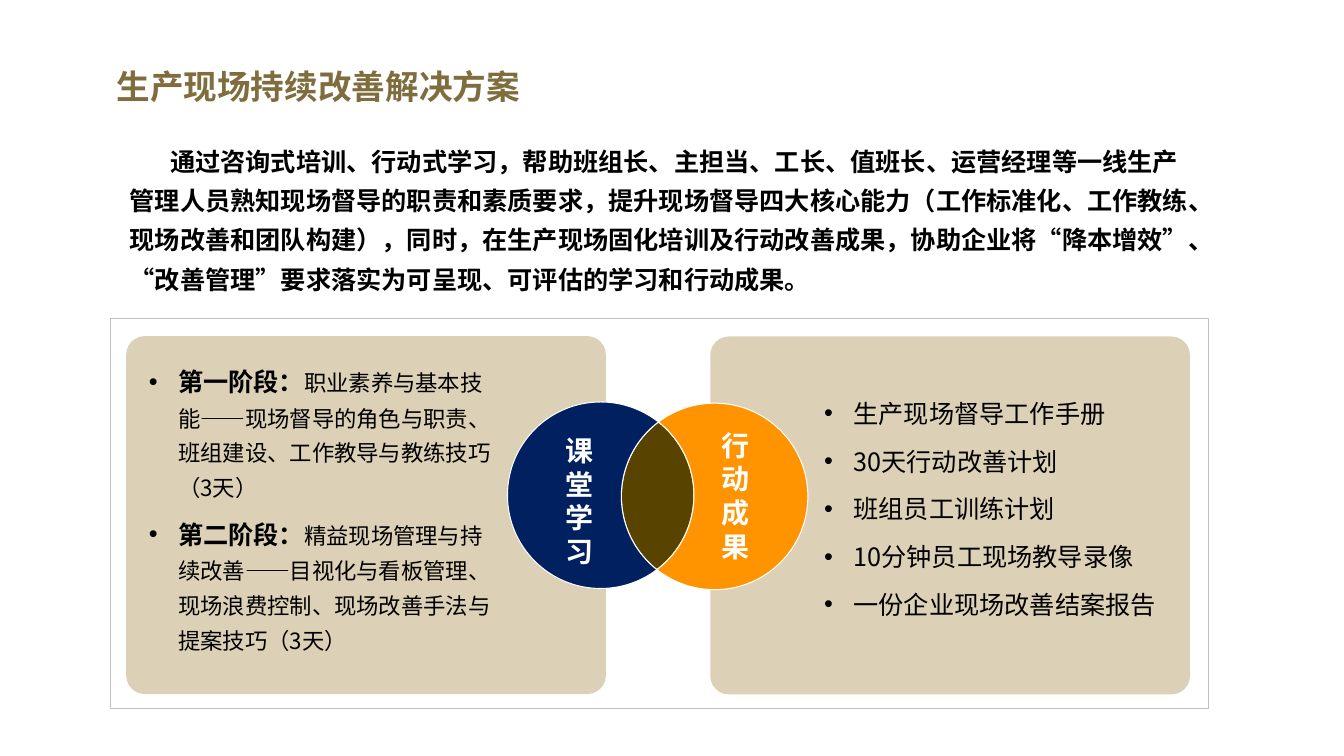
import math
from dataclasses import dataclass

from lxml import etree
from pptx import Presentation
from pptx import util as u
from pptx.dml.color import RGBColor
from pptx.enum import lang, shapes, text
from pptx.oxml.ns import qn


@dataclass(frozen=True)
class Theme:
    body: str = "Noto Sans CJK SC"
    label: str = "Roboto"
    black: str = "000000"
    white: str = "FFFFFF"
    title: str = "806D3E"
    panel: str = "DCD1B6"
    border: str = "BFBFBF"
    navy: str = "002060"
    orange: str = "FF9400"
    overlap: str = "584300"
    title_size: int = 24
    label_size: int = 20
    body_size: int = 18
    detail_size: int = 16


T = Theme()
RADIUS = 2.35
LEFT_CENTER = (15.14, 12.48)
RIGHT_CENTER = (18.01, 12.51)

INTRO = (
    "通过咨询式培训、行动式学习，帮助班组长、主担当、工长、值班长、运营经理等一线生产"
    "管理人员熟知现场督导的职责和素质要求，提升现场督导四大核心能力（工作标准化、工作教练、"
    "现场改善和团队构建），同时，在生产现场固化培训及行动改善成果，协助企业将“降本增效”、"
    "“改善管理”要求落实为可呈现、可评估的学习和行动成果。"
)
STAGES = [
    ("第一阶段：", "职业素养与基本技能——现场督导的角色与职责、班组建设、工作教导与教练技巧（3天）"),
    ("第二阶段：", "精益现场管理与持续改善——目视化与看板管理、现场浪费控制、现场改善手法与提案技巧（3天）"),
]
RESULTS = ["生产现场督导工作手册", "30天行动改善计划", "班组员工训练计划",
           "10分钟员工现场教导录像", "一份企业现场改善结案报告"]


def paint(sp, fill, line=None, width=1):
    sp.shadow.inherit = False
    sp.fill.solid()
    sp.fill.fore_color.rgb = RGBColor.from_string(fill)
    if line:
        sp.line.color.rgb = RGBColor.from_string(line)
        sp.line.width = u.Pt(width)
    else:
        sp.line.fill.background()


def add_panel(s, kind, box, fill, line=None):
    sp = s.shapes.add_shape(kind, *map(u.Cm, box))
    paint(sp, fill, line)
    if kind == shapes.MSO_SHAPE.ROUNDED_RECTANGLE:
        sp.adjustments[0] = 0.052


def add_run(p, content, size=T.body_size, color=T.black, bold=False, font=T.body):
    r = p.add_run()
    r.text = content
    r.font.name = font
    r.font.size = u.Pt(size)
    r.font.bold = bold
    r.font.color.rgb = RGBColor.from_string(color)
    r.font.language_id = lang.MSO_LANGUAGE_ID.SIMPLIFIED_CHINESE


def indent(p, margin, first, bullet):
    pPr = p._p.get_or_add_pPr()
    pPr.set("marL", str(u.Cm(margin)))
    pPr.set("indent", str(u.Cm(first)))
    if bullet:
        etree.SubElement(pPr, qn("a:buFont")).set("typeface", "Arial")
        etree.SubElement(pPr, qn("a:buChar")).set("char", "•")


def add_text(shape_tree, box, paragraphs, wrap=True, spacing=None, bullet=False, first=0, **style):
    tf = shape_tree.add_textbox(*map(u.Cm, box)).text_frame
    tf.word_wrap = wrap
    tf.auto_size = text.MSO_AUTO_SIZE.SHAPE_TO_FIT_TEXT
    for i, runs in enumerate(paragraphs):
        p = tf.add_paragraph() if i else tf.paragraphs[0]
        if bullet or first:
            indent(p, 0.74 if bullet else 0, -0.74 if bullet else first, bullet)
        if spacing:
            p.line_spacing = spacing
        if i:
            p.space_before = u.Pt(6)
        for content, extra in runs:
            add_run(p, content, **{**style, **extra})


def arc(center, start, end):
    quarter = math.pi / 2
    low, high = sorted((start, end))
    cuts = [k * quarter for k in range(math.floor(low / quarter) + 1, math.ceil(high / quarter))]
    stops = sorted([start, *cuts, end], reverse=start > end)
    curves = []
    for a, b in zip(stops, stops[1:]):
        pull = 4 / 3 * math.tan((b - a) / 4)
        offsets = [(math.cos(a), math.sin(a)),
                   (math.cos(a) - pull * math.sin(a), math.sin(a) + pull * math.cos(a)),
                   (math.cos(b) + pull * math.sin(b), math.sin(b) - pull * math.cos(b)),
                   (math.cos(b), math.sin(b))]
        curves.append([(u.Cm(center[0] + RADIUS * x), u.Cm(center[1] + RADIUS * y))
                       for x, y in offsets])
    return curves


def add_outline(group, curves, fill):
    builder = group.shapes.build_freeform(*curves[0][0])
    builder.add_line_segments([curve[-1] for curve in curves], close=True)
    sp = builder.convert_to_shape()
    left = min(curve[0][0] for curve in curves)
    top = min(curve[0][1] for curve in curves)
    for segment, curve in zip(list(sp._element.iter(qn("a:lnTo"))), curves):
        bezier = etree.Element(qn("a:cubicBezTo"))
        for x, y in curve[1:]:
            etree.SubElement(bezier, qn("a:pt"), x=str(x - left), y=str(y - top))
        segment.getparent().replace(segment, bezier)
    paint(sp, fill, T.white, 0)


def add_venn(s):
    dx = RIGHT_CENTER[0] - LEFT_CENTER[0]
    dy = RIGHT_CENTER[1] - LEFT_CENTER[1]
    tilt = math.atan2(dy, dx)
    half = math.acos(math.hypot(dx, dy) / 2 / RADIUS)
    low, high = tilt - half, tilt + half
    turn = 2 * math.pi
    inner_left = arc(RIGHT_CENTER, math.pi + high, math.pi + low)
    inner_right = arc(LEFT_CENTER, high, low)
    group = s.shapes.add_group_shape()
    add_outline(group, inner_left + inner_right, T.overlap)
    add_outline(group, arc(LEFT_CENTER, high, low + turn) + inner_left, T.navy)
    add_outline(group, arc(RIGHT_CENTER, math.pi + high, math.pi + low + turn) + inner_right, T.orange)
    for content, box in [("课堂学习", (14, 10.8, 1.8, 3.68)),
                         ("行动成果", (17.93, 10.67, 1.19, 3.68))]:
        add_text(group.shapes, box, [[(content, {})]],
                 size=T.label_size, color=T.white, bold=True, font=T.label)


def main():
    prs = Presentation()
    prs.slide_width, prs.slide_height = u.Cm(33.87), u.Cm(19.05)
    s = prs.slides.add_slide(prs.slide_layouts[6])

    add_panel(s, shapes.MSO_SHAPE.RECTANGLE, (2.79, 8.03, 27.66, 9.83), T.white, T.border)
    for left, top in ((17.9, 8.48), (3.18, 8.47)):
        add_panel(s, shapes.MSO_SHAPE.ROUNDED_RECTANGLE, (left, top, 12.09, 9.02), T.panel)
    add_venn(s)

    stages = [[(name, {"bold": True}), (detail, {"size": T.detail_size})] for name, detail in STAGES]
    add_text(s.shapes, (3.5, 8.88, 9.42, 7.72), stages, spacing=1.3, bullet=True)
    add_text(s.shapes, (20.52, 9.68, 9.19, 6.12), [[(item, {})] for item in RESULTS],
             spacing=1.3, bullet=True)
    add_text(s.shapes, (2.69, 1.54, 10.77, 1.27), [[("生产现场持续改善解决方案", {})]],
             wrap=False, size=T.title_size, color=T.title, bold=True)
    add_text(s.shapes, (3.02, 3.33, 27.41, 4.27), [[(INTRO, {})]],
             spacing=1.3, first=1.02, bold=True)

    prs.save("out.pptx")


if __name__ == "__main__":
    main()
